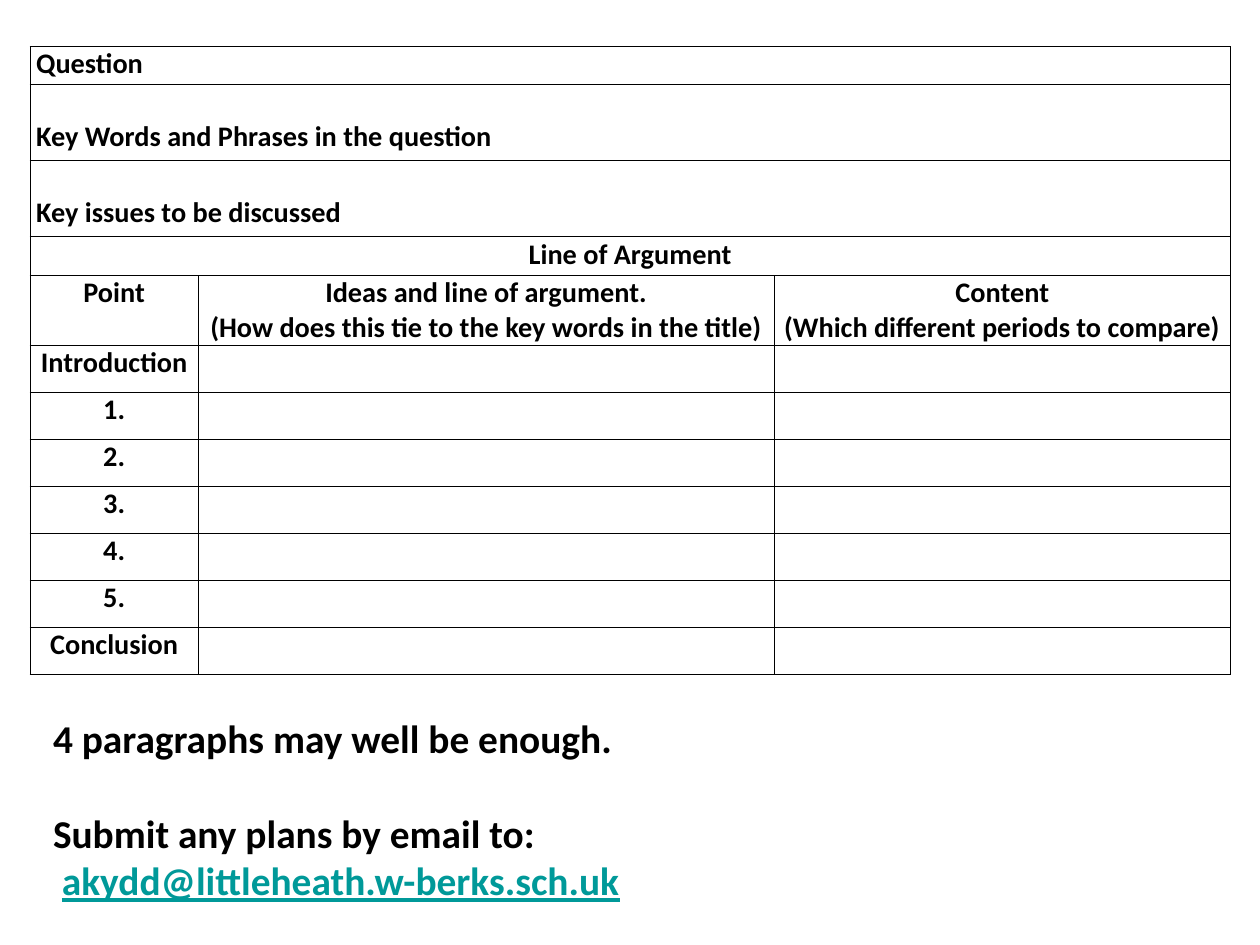
"""Build an essay planning slide: a planning grid and submission advice."""
from pptx import Presentation
from pptx.dml.color import RGBColor
from pptx.enum.text import MSO_ANCHOR, PP_ALIGN
from pptx.oxml import parse_xml
from pptx.oxml.ns import nsdecls
from pptx.util import Pt

LEFT, CENTER = PP_ALIGN.LEFT, PP_ALIGN.CENTER
TOP, BOTTOM = MSO_ANCHOR.TOP, MSO_ANCHOR.BOTTOM

COLUMN_WIDTHS = [136.8, 468, 370.8]
ROW_HEIGHTS = [31, 61.8, 61.8, 31.5, 57] + [38.2] * 7
PROMPTS = ["Question", "Key Words and Phrases in the question", "Key issues to be discussed"]
HEADINGS = [
    ["Point"],
    ["Ideas and line of argument.", "(How does this tie to the key words in the title)"],
    ["Content", "(Which different periods to compare)"],
]
POINTS = ["Introduction", *[f"{number}." for number in range(1, 6)], "Conclusion"]


def colour(value):
    return RGBColor.from_string(value)


def write(paragraph, text, size=23, color="000000", font="Calibri", align=LEFT,
          underline=False, before=0, indent=0):
    if indent:
        paragraph._p.get_or_add_pPr().set("marL", str(Pt(indent)))
    paragraph.alignment = align
    paragraph.space_before = Pt(before)
    run = paragraph.add_run()
    run.text = text
    run.font.name = font
    run.font.size = Pt(size)
    run.font.bold = True
    run.font.underline = underline
    run.font.color.rgb = colour(color)


class PlanSlide:
    """Hold the slide and the style shared by its elements."""

    ink = "000000"
    paper = "FFFFFF"
    border = 1

    def __init__(self, presentation):
        self.slide = presentation.slides.add_slide(presentation.slide_layouts[6])

    def grid(self, left, top, widths, heights):
        frame = self.slide.shapes.add_table(
            len(heights), len(widths), Pt(left), Pt(top), Pt(sum(widths)), Pt(sum(heights)))
        table = frame.table
        table.first_row = table.horz_banding = False
        for column, width in zip(table.columns, widths):
            column.width = Pt(width)
        for row, height in zip(table.rows, heights):
            row.height = Pt(height)
            for cell in row.cells:
                self.style_cell(cell)
        return table

    def style_cell(self, cell):
        cell.margin_left = cell.margin_right = Pt(5)
        cell.margin_top = cell.margin_bottom = 0
        properties = cell._tc.get_or_add_tcPr()
        for side in "LRTB":
            properties.append(parse_xml(
                f'<a:ln{side} {nsdecls("a")} w="{Pt(self.border)}"><a:solidFill>'
                f'<a:srgbClr val="{self.ink}"/></a:solidFill></a:ln{side}>'))
        cell.fill.solid()
        cell.fill.fore_color.rgb = colour(self.paper)

    def fill_cell(self, cell, lines, align=CENTER, anchor=TOP):
        cell.vertical_anchor = anchor
        if anchor == BOTTOM:
            cell.margin_bottom = Pt(5.5)
        styled = [(line, {"color": self.ink, "align": align}) for line in lines]
        self.fill_frame(cell.text_frame, styled)

    def fill_frame(self, frame, lines):
        for index, (line, style) in enumerate(lines):
            paragraph = frame.add_paragraph() if index else frame.paragraphs[0]
            write(paragraph, line, **style)

    def text_block(self, left, top, width, height, lines):
        frame = self.slide.shapes.add_textbox(Pt(left), Pt(top), Pt(width), Pt(height)).text_frame
        frame.word_wrap = True
        self.fill_frame(frame, [(line, {"size": 32, **style}) for line, style in lines])


def main():
    presentation = Presentation()
    presentation.slide_width, presentation.slide_height = Pt(1024), Pt(768)
    plan = PlanSlide(presentation)

    table = plan.grid(24.4, 38, COLUMN_WIDTHS, ROW_HEIGHTS)
    for row in range(4):
        table.cell(row, 0).merge(table.cell(row, 2))
    for row, prompt in enumerate(PROMPTS):
        plan.fill_cell(table.cell(row, 0), [prompt], align=LEFT, anchor=BOTTOM if row else TOP)
    plan.fill_cell(table.cell(3, 0), ["Line of Argument"])
    for column, heading in enumerate(HEADINGS):
        plan.fill_cell(table.cell(4, column), heading)
    for row, point in enumerate(POINTS, start=5):
        plan.fill_cell(table.cell(row, 0), [point])

    plan.text_block(36, 576.7, 788.4, 187, [
        ("4 paragraphs may well be enough.", {}),
        ("Submit any plans by email to:", {"before": 39}),
        ("akydd@littleheath.w-berks.sch.uk",
         {"color": "009999", "underline": True, "indent": 7.2}),
    ])
    presentation.save("out.pptx")


if __name__ == "__main__":
    main()
